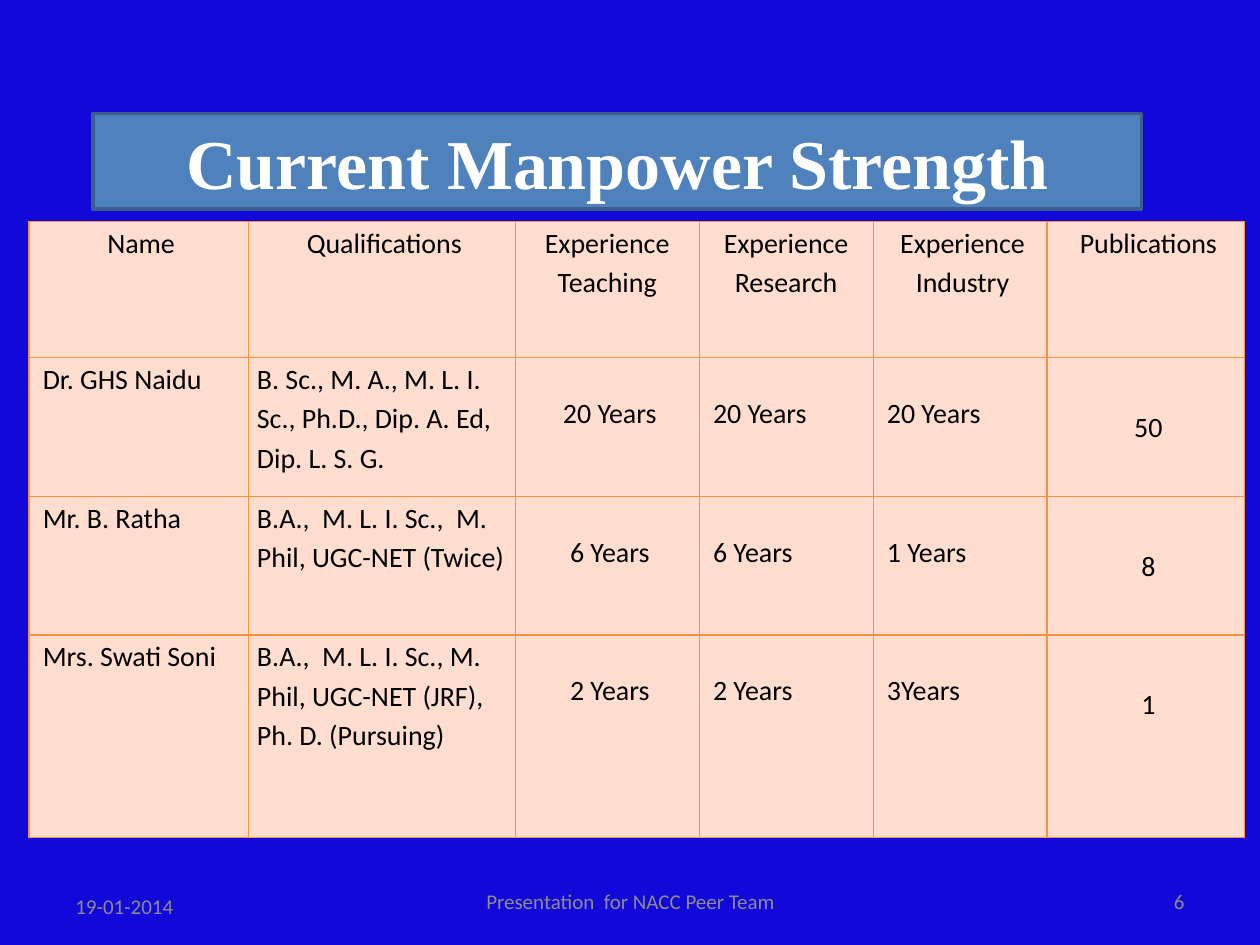
from lxml.etree import SubElement
from pptx import Presentation
from pptx.dml.color import RGBColor
from pptx.enum.shapes import MSO_SHAPE
from pptx.enum.text import MSO_ANCHOR, PP_ALIGN
from pptx.oxml.ns import qn
from pptx.util import Inches, Pt

BLUE = RGBColor(0x12, 0x08, 0xDA)
STEEL = RGBColor(0x4F, 0x81, 0xBD)
STEEL_DARK = RGBColor(0x3A, 0x5F, 0x8C)
PEACH = RGBColor(0xFF, 0xDE, 0xD0)
ORANGE = RGBColor(0xF6, 0x92, 0x40)
GRAY = RGBColor(0x8C, 0x8C, 0x8C)
WHITE = RGBColor(0xFF, 0xFF, 0xFF)
BLACK = RGBColor(0, 0, 0)

LEFT, CENTER, RIGHT = PP_ALIGN.LEFT, PP_ALIGN.CENTER, PP_ALIGN.RIGHT

COLUMN_WIDTHS = [1.74, 2.12, 1.46, 1.38, 1.38, 1.57]
ROW_HEIGHTS = [1.08, 1.1, 1.1, 1.61]
HEADER = ["Name", "Qualifications", "Experience\nTeaching",
          "Experience\nResearch", "Experience\nIndustry", "Publications"]
STAFF = [
    ["Dr. GHS Naidu",
     "B. Sc., M. A., M. L. I. Sc., Ph.D., Dip. A. Ed, Dip. L. S. G.",
     "20 Years", "20 Years", "20 Years", "50"],
    ["Mr. B. Ratha", "B.A.,  M. L. I. Sc.,  M. Phil, UGC-NET (Twice)",
     "6 Years", "6 Years", "1 Years", "8"],
    ["Mrs. Swati Soni",
     "B.A.,  M. L. I. Sc., M. Phil, UGC-NET (JRF),\nPh. D. (Pursuing)",
     "2 Years", "2 Years", "3Years", "1"],
]
# Per column of the staff rows: alignment, top margin, first-line indent
STAFF_FORMATS = [(LEFT, 0, 0.04), (LEFT, 0, 0), (CENTER, 0.27, 0.04),
                 (LEFT, 0.27, 0.04), (LEFT, 0.27, 0.04), (CENTER, 0.38, 0.04)]
HEADER_INDENTS = [0.04, 0.04, 0, 0, 0.04, 0.04]


class SlideBuilder:
    """Holds the text styles and the current slide."""

    styles = {
        "title": {"name": "Times New Roman", "size": Pt(40), "bold": True, "color": WHITE},
        "footer": {"name": "Calibri", "size": Pt(12), "bold": False, "color": GRAY},
        "cell": {"name": "Calibri", "size": Pt(16), "bold": False, "color": BLACK},
    }

    def __init__(self, slide):
        self.slide = slide
        slide.background.fill.solid()
        slide.background.fill.fore_color.rgb = BLUE

    def add_text(self, frame, text, style, alignment, indent=0, line_spacing=None):
        frame.word_wrap = True
        for number, line in enumerate(text.split("\n")):
            paragraph = frame.add_paragraph() if number else frame.paragraphs[0]
            paragraph.alignment = alignment
            paragraph.line_spacing = line_spacing
            if indent:
                paragraph._p.get_or_add_pPr().set("indent", str(Inches(indent)))
            run = paragraph.add_run()
            run.text = line
            for key, value in self.styles[style].items():
                if key == "color":
                    run.font.color.rgb = value
                else:
                    setattr(run.font, key, value)

    def banner(self, text, *box):
        shape = self.slide.shapes.add_shape(MSO_SHAPE.RECTANGLE, *map(Inches, box))
        shape.shadow.inherit = False
        shape.fill.solid()
        shape.fill.fore_color.rgb = STEEL
        shape.line.color.rgb = STEEL_DARK
        shape.line.width = Pt(2)
        shape.text_frame.vertical_anchor = MSO_ANCHOR.MIDDLE
        self.add_text(shape.text_frame, text, "title", CENTER)

    def footer(self, text, alignment, *box):
        frame = self.slide.shapes.add_textbox(*map(Inches, box)).text_frame
        frame.vertical_anchor = MSO_ANCHOR.MIDDLE
        self.add_text(frame, text, "footer", alignment)

    def table(self, left, top, widths, heights):
        table = self.slide.shapes.add_table(
            len(heights), len(widths), Inches(left), Inches(top),
            Inches(sum(widths)), Inches(sum(heights))).table
        table.first_row = table.horz_banding = False
        for column, width in zip(table.columns, widths):
            column.width = Inches(width)
        for row, height in zip(table.rows, heights):
            row.height = Inches(height)
        return table

    def cell(self, cell, text, alignment, top, indent):
        margins = {"margin_left": 0.07, "margin_right": 0.07,
                   "margin_top": top, "margin_bottom": 0}
        for name, margin in margins.items():
            setattr(cell, name, Inches(margin))
        self.borders(cell)
        cell.fill.solid()
        cell.fill.fore_color.rgb = PEACH
        self.add_text(cell.text_frame, text, "cell", alignment, indent, 1.15)

    def borders(self, cell):
        properties = cell._tc.get_or_add_tcPr()
        for side in ("lnL", "lnR", "lnT", "lnB"):
            line = SubElement(properties, qn(f"a:{side}"), w=str(Pt(0.75)))
            fill = SubElement(line, qn("a:solidFill"))
            SubElement(fill, qn("a:srgbClr"), val=str(ORANGE))


def main():
    presentation = Presentation()
    presentation.slide_width = Inches(10)
    presentation.slide_height = Inches(7.5)
    builder = SlideBuilder(presentation.slides.add_slide(presentation.slide_layouts[6]))

    # Footer line
    builder.footer("19-01-2014", LEFT, 0.5, 6.99, 2.33, 0.4)
    builder.footer("Presentation  for NACC Peer Team", CENTER, 3.42, 6.95, 3.17, 0.4)
    builder.footer("6", RIGHT, 7.17, 6.95, 2.33, 0.4)

    # Title banner
    builder.banner("Current Manpower Strength", 0.74, 0.9, 8.32, 0.76)

    # Staff table
    table = builder.table(0.23, 1.76, COLUMN_WIDTHS, ROW_HEIGHTS)
    header_formats = [(CENTER, 0, indent) for indent in HEADER_INDENTS]
    for row, texts in enumerate([HEADER] + STAFF):
        formats = STAFF_FORMATS if row else header_formats
        for column, (text, cell_format) in enumerate(zip(texts, formats)):
            builder.cell(table.cell(row, column), text, *cell_format)

    presentation.save("out.pptx")


if __name__ == "__main__":
    main()
